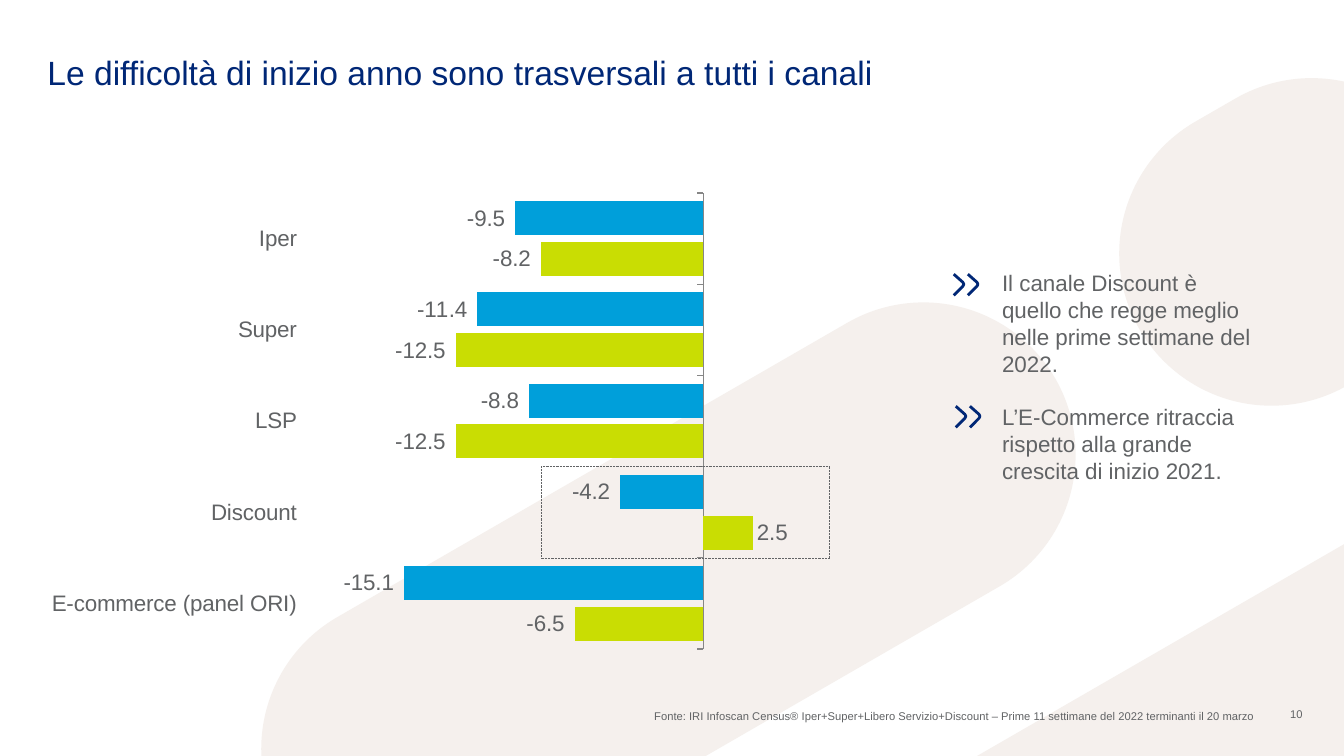
from dataclasses import dataclass

from lxml.etree import SubElement
from pptx import Presentation
from pptx.chart.data import CategoryChartData
from pptx.dml.color import RGBColor as RGB
from pptx.enum.chart import XL_CHART_TYPE as ChartType
from pptx.enum.chart import XL_LABEL_POSITION as LabelPos
from pptx.enum.chart import XL_TICK_LABEL_POSITION as TickLabelPos
from pptx.enum.chart import XL_TICK_MARK as TickMark
from pptx.enum.dml import MSO_LINE_DASH_STYLE as Dash
from pptx.enum.shapes import MSO_SHAPE as Shape
from pptx.enum.text import MSO_ANCHOR as Anchor
from pptx.enum.text import MSO_AUTO_SIZE as AutoSize
from pptx.enum.text import PP_ALIGN as Align
from pptx.oxml.ns import qn
from pptx.util import Inches, Pt


@dataclass(frozen=True)
class Theme:
    font: str = "Arial"
    navy: RGB = RGB(0x00, 0x27, 0x76)
    grey: RGB = RGB(0x61, 0x63, 0x65)
    axis: RGB = RGB(0x86, 0x86, 0x86)
    blue: RGB = RGB(0x00, 0x9F, 0xDA)
    lime: RGB = RGB(0xC9, 0xDD, 0x03)
    sand: RGB = RGB(0xF5, 0xF0, 0xED)
    title: Pt = Pt(24)
    body: Pt = Pt(16)
    small: Pt = Pt(8)


THEME = Theme()
NUMBER_FORMAT = r"#,##0.0_ ;[Red]\-#,##0.0\ "
CHANNELS = ["Iper", "Super", "LSP", "Discount", "E-commerce (panel ORI)"]
TRENDS = [
    ([-9.5, -11.4, -8.8, -4.2, -15.1], THEME.blue),
    ([-8.2, -12.5, -12.5, 2.5, -6.5], THEME.lime),
]
COMMENTS = [
    "Il canale Discount è quello che regge meglio nelle prime settimane del 2022.",
    "L’E-Commerce ritraccia rispetto alla grande crescita di inizio 2021.",
]
SOURCE = ("Fonte: IRI Infoscan Census® Iper+Super+Libero Servizio+Discount"
          " – Prime 11 settimane del 2022 terminanti il 20 marzo")


def set_values(target, values):
    for name, value in values.items():
        setattr(target, name, value)


def inches(*lengths):
    return [Inches(length) for length in lengths]


def set_font(font, size, color=THEME.grey):
    set_values(font, {"name": THEME.font, "size": size, "bold": False})
    font.color.rgb = color


def fill_text(frame, lines, size, color=THEME.grey, margins=(0.1, 0.05, 0.1, 0.05),
              anchor=Anchor.TOP, align=Align.LEFT, gap=0):
    sides = ("margin_left", "margin_top", "margin_right", "margin_bottom")
    set_values(frame, dict(zip(sides, inches(*margins))))
    set_values(frame, {"word_wrap": True, "auto_size": AutoSize.NONE,
                       "vertical_anchor": anchor})
    for index, line in enumerate(lines):
        paragraph = frame.add_paragraph() if index else frame.paragraphs[0]
        set_values(paragraph, {"text": line, "alignment": align, "line_spacing": 1.0,
                               "space_before": Pt(gap if index else 0)})
        set_font(paragraph.font, size, color)


# Background: slanted capsules given by centre and length
def add_background(slide):
    thickness = 3.02
    for center_x, center_y, length in [(6.63, 5.97, 8.86), (12.81, 2.4, 3.48),
                                       (12.59, 7.57, 8.86)]:
        capsule = slide.shapes.add_shape(
            Shape.ROUNDED_RECTANGLE,
            *inches(center_x - length / 2, center_y - thickness / 2, length, thickness))
        capsule.adjustments[0] = 0.5
        capsule.rotation = -30
        capsule.shadow.inherit = False
        capsule.fill.solid()
        capsule.fill.fore_color.rgb = THEME.sand
        capsule.line.fill.background()


def add_title(slide, box):
    title = slide.shapes.title
    set_values(title, dict(zip(("left", "top", "width", "height"), inches(*box))))
    fill_text(title.text_frame,
              ["Le difficoltà di inizio anno sono trasversali a tutti i canali"],
              THEME.title, THEME.navy, margins=(0, 0, 0, 0))


# Chart: channel trends and the frame around the Discount channel
def add_channel_chart(slide, box):
    data = CategoryChartData(number_format=NUMBER_FORMAT)
    data.categories = CHANNELS
    for values, _ in TRENDS:
        data.add_series("", values)
    chart = slide.shapes.add_chart(ChartType.BAR_CLUSTERED, *inches(*box), data).chart
    set_values(chart, {"has_legend": False, "has_title": False})
    set_font(chart.font, THEME.body)

    channel_axis, value_axis = chart.category_axis, chart.value_axis
    set_values(channel_axis, {"reverse_order": True, "has_major_gridlines": False,
                              "major_tick_mark": TickMark.OUTSIDE,
                              "tick_label_position": TickLabelPos.LOW})
    set_font(channel_axis.tick_labels.font, THEME.body)
    channel_axis.format.line.color.rgb = THEME.axis
    channel_axis.format.line.width = Pt(0.75)
    set_values(value_axis, {"minimum_scale": -20, "maximum_scale": 5,
                            "has_major_gridlines": False, "visible": False})

    plot = chart.plots[0]
    set_values(plot, {"gap_width": 48, "overlap": -20, "vary_by_categories": False})
    for series, (_, color) in zip(plot.series, TRENDS):
        series.invert_if_negative = False
        series.format.fill.solid()
        series.format.fill.fore_color.rgb = color
        labels = series.data_labels
        set_values(labels, {"show_value": True, "position": LabelPos.OUTSIDE_END,
                            "number_format": NUMBER_FORMAT,
                            "number_format_is_linked": False})
        set_font(labels.font, THEME.body)

    # Plot area as shares of the chart box
    plot_area = chart._chartSpace.chart.plotArea
    layout = plot_area.find(qn("c:layout"))
    if layout is None:
        layout = SubElement(plot_area, qn("c:layout"))
        plot_area.insert(0, layout)
    manual = SubElement(layout, qn("c:manualLayout"))
    for tag, value in {"layoutTarget": "inner", "xMode": "edge", "yMode": "edge",
                       "x": 0.353, "y": 0.125, "w": 0.628, "h": 0.838}.items():
        SubElement(manual, qn(f"c:{tag}")).set("val", str(value))

    left, top = box[:2]
    highlight = slide.shapes.add_shape(
        Shape.RECTANGLE, *inches(left + 5.09, top + 3.39, 2.86, 0.91))
    highlight.shadow.inherit = False
    highlight.fill.background()
    set_values(highlight.line, {"width": Pt(0.5), "dash_style": Dash.ROUND_DOT})
    highlight.line.color.rgb = THEME.grey


def add_double_chevron(slide, left, top):
    outline = [(0, 0), (0.09, 0.08), (0.1, 0.1), (0.09, 0.12), (0, 0.21)]
    for shift in (0, 0.14):
        points = [inches(left + shift + x, top + y) for x, y in outline]
        builder = slide.shapes.build_freeform(*points[0], scale=1.0)
        builder.add_line_segments(points[1:], close=False)
        chevron = builder.convert_to_shape()
        chevron.shadow.inherit = False
        chevron.fill.background()
        chevron.line.color.rgb = THEME.navy
        chevron.line.width = Pt(2)


# Comments with their chevron markers
def add_comments(slide, box):
    left, top = box[:2]
    comments = slide.shapes.add_textbox(*inches(*box))
    fill_text(comments.text_frame, COMMENTS, THEME.body, gap=19)
    for x, y in [(-0.38, 0.1), (-0.36, 1.41)]:
        add_double_chevron(slide, left + x, top + y)


# Footer: source and page number
def add_footer(slide, box):
    left, top, width, height = box
    source = slide.shapes.add_textbox(*inches(left, top + 0.04, 6.91, 0.21))
    fill_text(source.text_frame, [SOURCE], THEME.small,
              margins=(0.07, 0.04, 0.07, 0.04), align=Align.RIGHT)
    page = slide.shapes.add_textbox(*inches(left + width - 0.47, top, 0.47, height))
    fill_text(page.text_frame, ["10"], THEME.small, margins=(0.1, 0.05, 0, 0.05),
              anchor=Anchor.MIDDLE, align=Align.RIGHT)


def main():
    deck = Presentation()
    set_values(deck, {"slide_width": Inches(13.33), "slide_height": Inches(7.5)})
    slide = deck.slides.add_slide(deck.slide_layouts.get_by_name("Title Only"))
    add_background(slide)
    add_title(slide, (0.47, 0.51, 12.41, 0.69))
    add_channel_chart(slide, (0.28, 1.24, 7.83, 5.4))
    add_comments(slide, (9.84, 2.62, 2.69, 2.26))
    add_footer(slide, (5.61, 6.96, 7.31, 0.24))
    deck.save("out.pptx")


if __name__ == "__main__":
    main()
